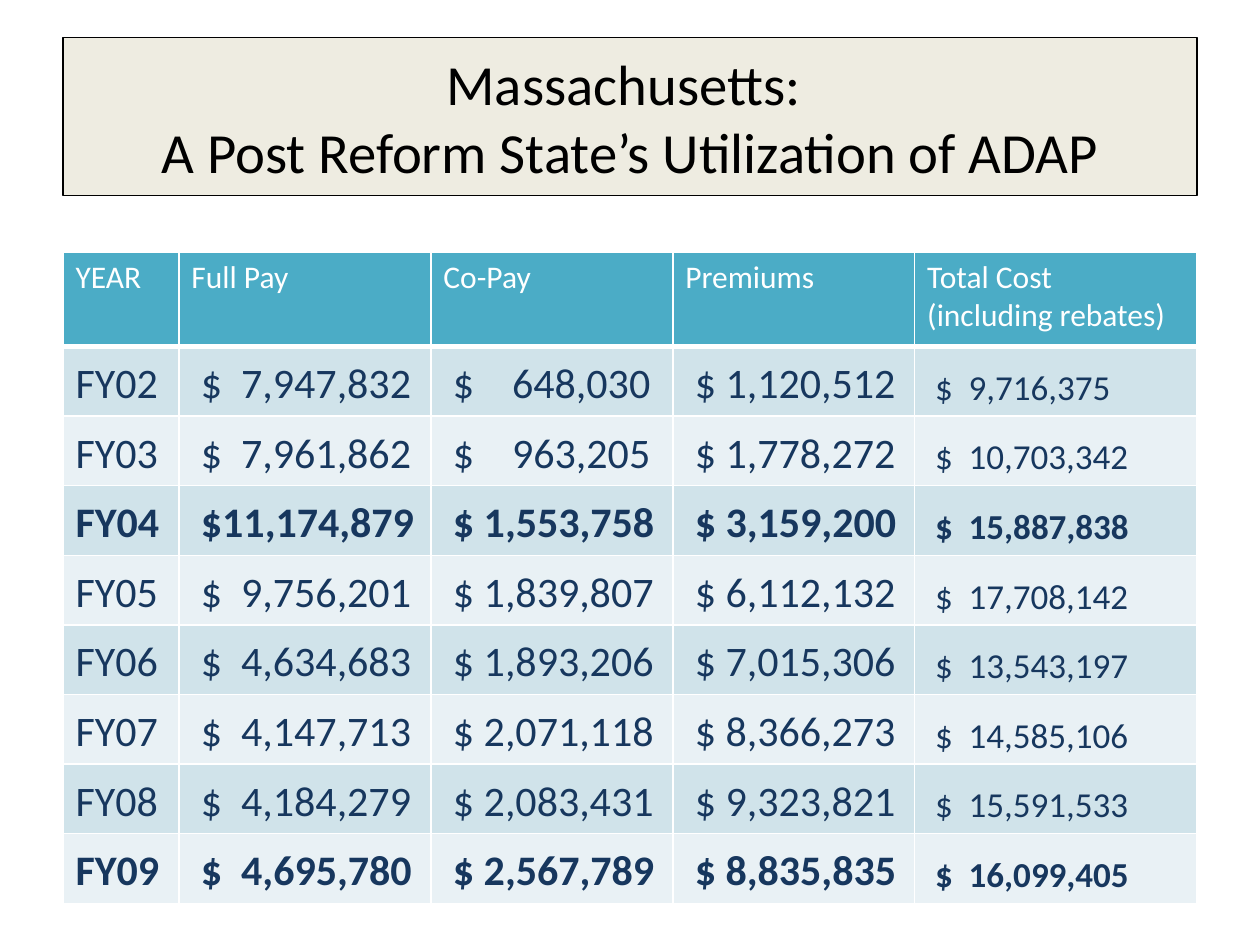
from lxml.etree import SubElement
from pptx import Presentation
from pptx.dml.color import RGBColor
from pptx.enum.text import MSO_ANCHOR as Anchor, MSO_AUTO_SIZE as AutoSize, PP_ALIGN as Align
from pptx.oxml.ns import qn
from pptx.util import Inches, Pt

TITLE = "Massachusetts: \vA Post Reform State’s Utilization of ADAP"
HEADERS = ["YEAR", "Full Pay", "Co-Pay", "Premiums", "Total Cost\n(including rebates)"]
ROWS = [
    ["FY02", " $  7,947,832", " $    648,030", " $ 1,120,512", " $  9,716,375"],
    ["FY03", " $  7,961,862", " $    963,205", " $ 1,778,272", " $  10,703,342"],
    ["FY04", " $11,174,879", " $ 1,553,758", " $ 3,159,200", " $  15,887,838"],
    ["FY05", " $  9,756,201", " $ 1,839,807", " $ 6,112,132", " $  17,708,142"],
    ["FY06", " $  4,634,683", " $ 1,893,206", " $ 7,015,306", " $  13,543,197"],
    ["FY07", " $  4,147,713", " $ 2,071,118", " $ 8,366,273", " $  14,585,106"],
    ["FY08", " $  4,184,279", " $ 2,083,431", " $ 9,323,821", " $  15,591,533"],
    ["FY09", " $  4,695,780", " $ 2,567,789", " $ 8,835,835", " $  16,099,405"],
]
BOLD_YEARS = {"FY04", "FY09"}
COLUMN_WIDTHS = [0.92, 2, 1.92, 1.92, 2.24]
HEADER_HEIGHT = 0.75
HEADER_FILL = "4BACC6"
BAND_FILLS = ["D0E3EA", "E9F1F5"]
HANGING_INDENT = 0.38


def color(hex_value):
    return RGBColor.from_string(hex_value)


def set_attributes(target, values):
    for name, value in values.items():
        setattr(target, name, value)


def paint(fill, hex_value):
    fill.solid()
    fill.fore_color.rgb = color(hex_value)


def format_text(frame, size, hex_value, bold=False, alignment=Align.LEFT):
    for paragraph in frame.paragraphs:
        paragraph.alignment = alignment
        for run in paragraph.runs:
            set_attributes(run.font, {"name": "Calibri", "size": Pt(size), "bold": bold})
            run.font.color.rgb = color(hex_value)


def place_title(slide, left, top, width, height):
    title = slide.shapes.title
    set_attributes(title, {"left": Inches(left), "top": Inches(top),
                           "width": Inches(width), "height": Inches(height)})
    paint(title.fill, "EEECE1")
    paint(title.line.fill, "000000")
    title.line.width = Pt(0.75)
    frame = title.text_frame
    set_attributes(frame, {"text": TITLE, "word_wrap": True,
                           "auto_size": AutoSize.NONE, "vertical_anchor": Anchor.MIDDLE})
    format_text(frame, 32.4, "000000", alignment=Align.CENTER)


def set_borders(cell, widths):
    properties = cell._tc.get_or_add_tcPr()
    for side, width in widths.items():
        line = SubElement(properties, qn(f"a:ln{side}"), w=str(Pt(width)))
        fill = SubElement(line, qn("a:solidFill"))
        SubElement(fill, qn("a:srgbClr"), val="FFFFFF")


def fill_header(cell, text):
    set_borders(cell, {"L": 1, "R": 1, "T": 1, "B": 3})
    paint(cell.fill, HEADER_FILL)
    cell.text = text
    format_text(cell.text_frame, 18, "FFFFFF")


def fill_body(cell, text, band, size, bold):
    set_borders(cell, {"L": 1, "R": 1, "B": 1})
    paint(cell.fill, band)
    set_attributes(cell, {"text": text, "vertical_anchor": Anchor.BOTTOM})
    format_text(cell.text_frame, size, "17375E", bold)
    indent = Inches(HANGING_INDENT)
    properties = cell.text_frame.paragraphs[0]._p.get_or_add_pPr()
    properties.set("marL", str(indent))
    properties.set("indent", str(-indent))


def place_cost_table(slide, left, top, width, height):
    table = slide.shapes.add_table(len(ROWS) + 1, len(HEADERS), Inches(left), Inches(top),
                                   Inches(width), Inches(height)).table
    for column, column_width in zip(table.columns, COLUMN_WIDTHS):
        column.width = Inches(column_width)
    for row in table.rows:
        row.height = Inches((height - HEADER_HEIGHT) / len(ROWS))
    table.rows[0].height = Inches(HEADER_HEIGHT)
    for column, text in enumerate(HEADERS):
        fill_header(table.cell(0, column), text)
    for index, values in enumerate(ROWS):
        for column, text in enumerate(values):
            size = 20 if column == len(HEADERS) - 1 else 24
            fill_body(table.cell(index + 1, column), text, BAND_FILLS[index % 2],
                      size, values[0] in BOLD_YEARS)


def main():
    presentation = Presentation()
    set_attributes(presentation, {"slide_width": Inches(10), "slide_height": Inches(7.5)})
    slide = presentation.slides.add_slide(presentation.slide_layouts.get_by_name("Title Only"))
    place_title(slide, 0.5, 0.3, 9, 1.25)
    place_cost_table(slide, 0.5, 2, 9, 5.17)
    presentation.save("out.pptx")


if __name__ == "__main__":
    main()
